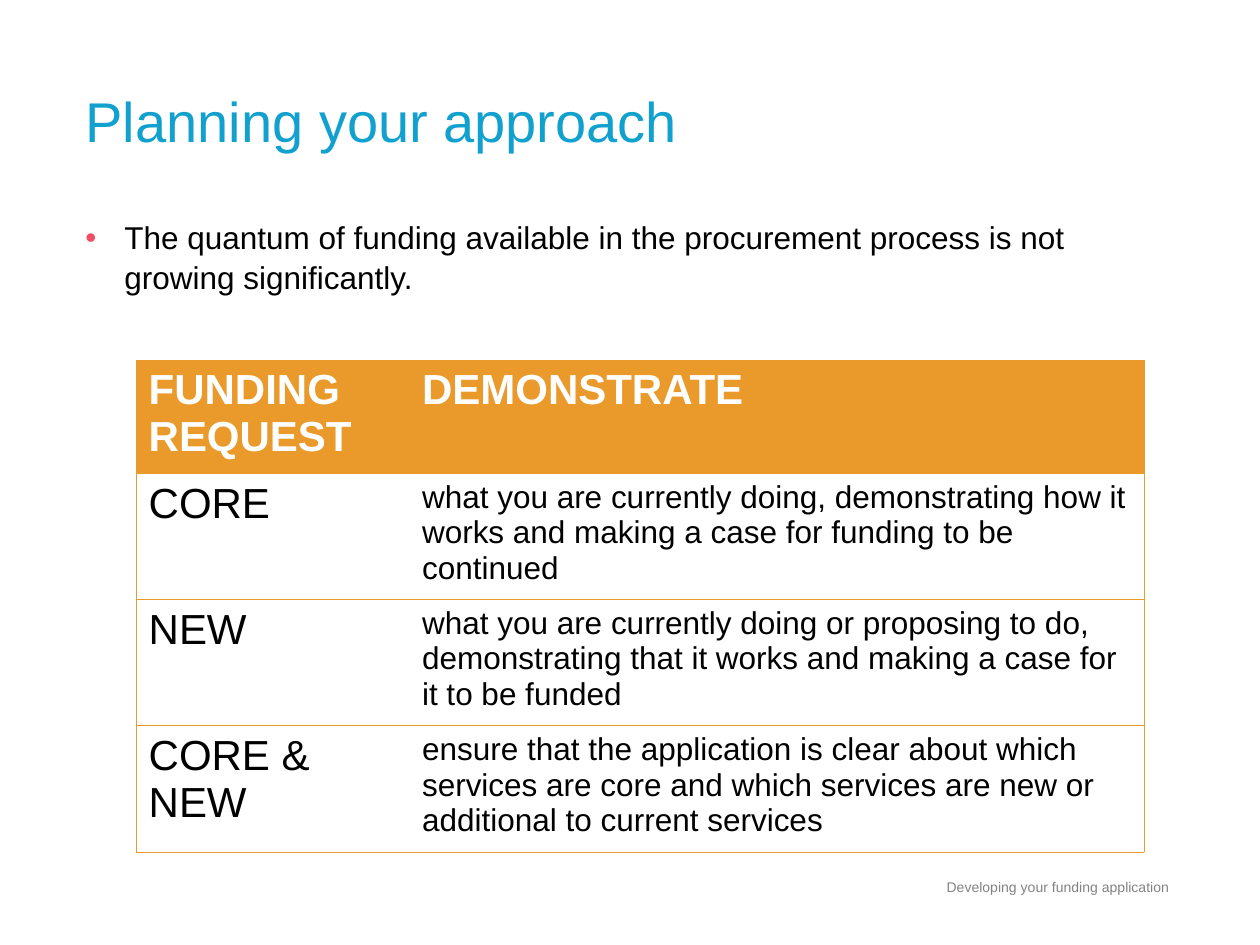
from pptx import Presentation
from pptx.dml.color import RGBColor
from pptx.enum.text import MSO_ANCHOR, PP_ALIGN
from pptx.oxml.ns import qn
from pptx.util import Inches, Pt
from lxml.etree import SubElement

HUES = {"title": "12A1CE", "text": "000000", "bullet": "F04E63",
        "head": "EA992B", "light": "FFFFFF", "foot": "818382"}
NO_STYLE = "{2D5ABB26-0587-4C30-8999-92F81FD0307C}"
ROWS = [
    ("FUNDING REQUEST", "DEMONSTRATE"),
    ("CORE", "what you are currently doing, demonstrating how it works "
             "and making a case for funding to be continued"),
    ("NEW", "what you are currently doing or proposing to do, demonstrating "
            "that it works and making a case for it to be funded"),
    ("CORE & NEW", "ensure that the application is clear about which services "
                   "are core and which services are new or additional to "
                   "current services"),
]


def color(name):
    return RGBColor.from_string(HUES[name])


def write(para, text, size, hue, bold=False):
    run = para.add_run()
    run.text = text
    font = run.font
    font.name, font.size, font.bold = "Arial", Pt(size), bold
    font.color.rgb = color(hue)


def place(shape, box):
    shape.left, shape.top, shape.width, shape.height = map(Inches, box)


def add_title(slide, box):
    title = slide.shapes.title
    place(title, box)
    frame = title.text_frame
    frame.vertical_anchor = MSO_ANCHOR.MIDDLE
    para = frame.paragraphs[0]
    para.alignment = PP_ALIGN.LEFT
    write(para, "Planning your approach", 32, "title")


def add_text(slide, box):
    """Add a wrapping text box and return its first paragraph."""
    frame = slide.shapes.add_textbox(*map(Inches, box)).text_frame
    frame.word_wrap = True
    return frame.paragraphs[0]


def add_body(slide, box):
    para = add_text(slide, box)
    para.line_spacing = 1.05
    props = para._p.get_or_add_pPr()
    props.set("marL", str(Inches(0.31)))
    props.set("indent", str(Inches(-0.31)))
    tint = SubElement(props, qn("a:buClr"))
    SubElement(tint, qn("a:srgbClr"), val=HUES["bullet"])
    SubElement(props, qn("a:buFont"), typeface="Arial")
    SubElement(props, qn("a:buChar"), char="•")
    write(para, "The quantum of funding available in the procurement process "
                "is not growing significantly.", 18, "text")


def add_foot(slide, box):
    para = add_text(slide, box)
    para.alignment = PP_ALIGN.RIGHT
    write(para, "Developing your funding application", 8, "foot")


def add_edges(cell, sides):
    props = cell._tc.get_or_add_tcPr()
    for side in sides:
        line = SubElement(props, qn(f"a:ln{side}"), w=str(Pt(0.5)))
        fill = SubElement(line, qn("a:solidFill"))
        SubElement(fill, qn("a:srgbClr"), val=HUES["head"])


def add_grid(slide, box):
    frame = slide.shapes.add_table(len(ROWS), 2, *map(Inches, box))
    table = frame.table
    table.first_row = table.horz_banding = False
    table._tbl.tblPr.find(qn("a:tableStyleId")).text = NO_STYLE
    first = 2.17
    for col, width in zip(table.columns, (first, box[2] - first)):
        col.width = Inches(width)
    for r, row in enumerate(ROWS):
        head = r == 0
        for c, text in enumerate(row):
            cell = table.cell(r, c)
            add_edges(cell, ("LTB", "RTB")[c])
            cell.fill.solid()
            cell.fill.fore_color.rgb = color("head" if head else "light")
            write(cell.text_frame.paragraphs[0], text,
                  24 if head or c == 0 else 18,
                  "light" if head else "text", head)
    for row, height in zip(table.rows, (0.85, 0.94, 0.94, 0.94)):
        row.height = Inches(height)


def main():
    deck = Presentation()
    deck.slide_width, deck.slide_height = Inches(10), Inches(7.5)
    slide = deck.slides.add_slide(deck.slide_layouts[5])
    add_title(slide, (0.58, 0.33, 8.5, 1.25))
    add_body(slide, (0.58, 1.67, 8.5, 0.8))
    add_foot(slide, (5.3, 6.92, 4.08, 0.25))
    add_grid(slide, (1.08, 2.86, 8, 3.67))
    deck.save("out.pptx")


if __name__ == "__main__":
    main()
